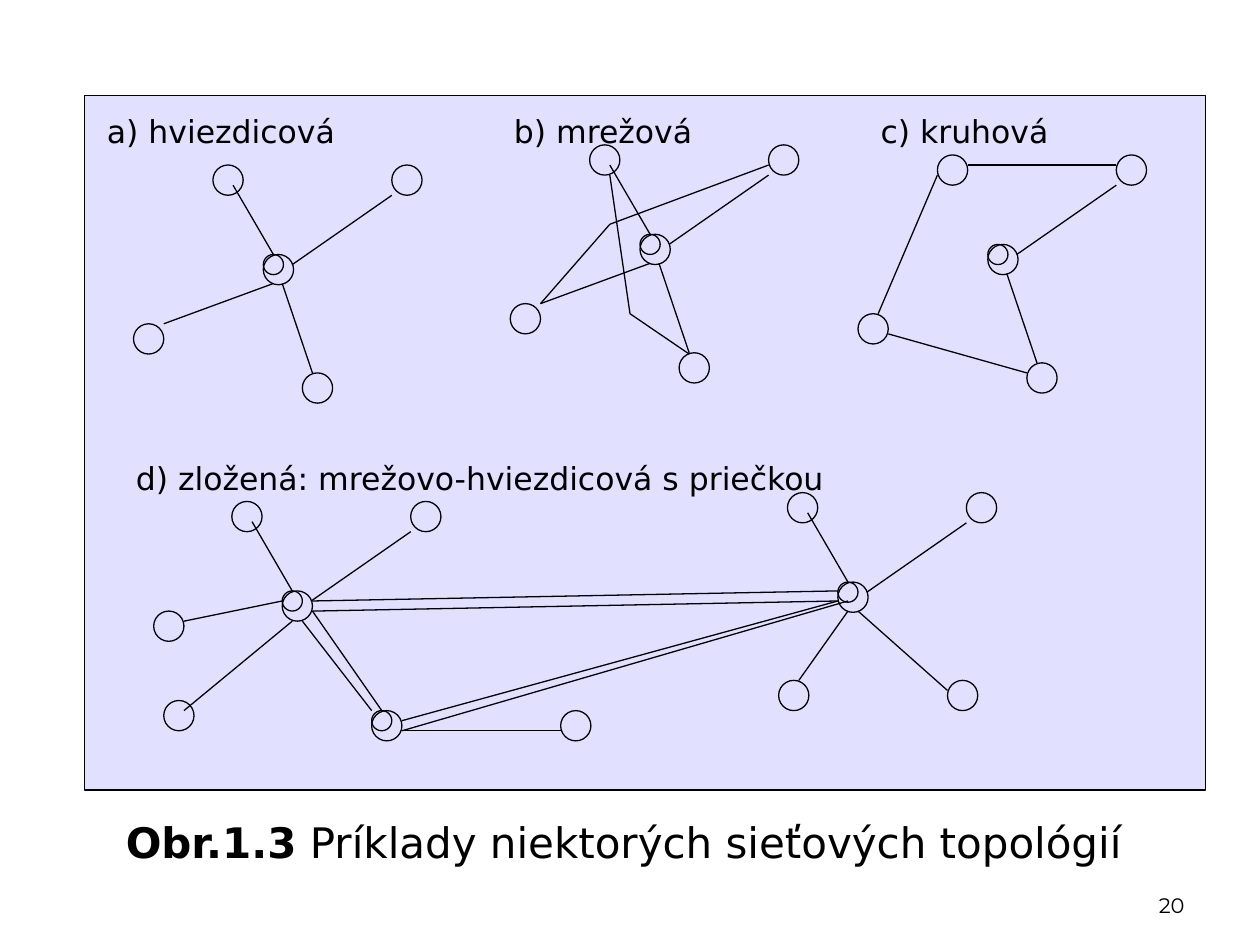
"""Builds a slide showing star, mesh, ring and combined network topologies."""
from dataclasses import dataclass

from lxml import etree
from pptx import Presentation
from pptx.dml.color import RGBColor
from pptx.enum.shapes import MSO_CONNECTOR, MSO_SHAPE
from pptx.enum.text import MSO_ANCHOR, PP_ALIGN
from pptx.oxml.ns import qn
from pptx.util import Inches, Pt

STRAIGHT = MSO_CONNECTOR.STRAIGHT
RECTANGLE, OVAL = MSO_SHAPE.RECTANGLE, MSO_SHAPE.OVAL
TOP, BOTTOM = MSO_ANCHOR.TOP, MSO_ANCHOR.BOTTOM
LEFT, RIGHT = PP_ALIGN.LEFT, PP_ALIGN.RIGHT


@dataclass(frozen=True)
class Theme:
    ink: RGBColor = RGBColor(0x00, 0x00, 0x00)
    panel: RGBColor = RGBColor(0x99, 0x99, 0xFF)
    panel_alpha: str = "29000"
    line: Pt = Pt(0.75)
    font: str = "DejaVu Sans"
    number_font: str = "Montserrat"
    label: Pt = Pt(18)
    caption: Pt = Pt(24)
    number: Pt = Pt(12)


theme = Theme()
NODE, CORE = 0.24, 0.16

prs = Presentation()
prs.slide_width, prs.slide_height = Inches(10), Inches(7.5)
slide = prs.slides.add_slide(prs.slide_layouts[6])


def outlined(kind, left, top, width, height):
    shape = slide.shapes.add_shape(
        kind, Inches(left), Inches(top), Inches(width), Inches(height))
    shape.shadow.inherit = False
    shape.fill.background()
    shape.line.color.rgb = theme.ink
    shape.line.width = theme.line
    return shape


def write(box, runs, size, font=theme.font, align=LEFT, anchor=TOP):
    frame = slide.shapes.add_textbox(*(Inches(v) for v in box)).text_frame
    frame.word_wrap = True
    frame.vertical_anchor = anchor
    paragraph = frame.paragraphs[0]
    paragraph.alignment = align
    for text, bold in runs:
        run = paragraph.add_run()
        run.text = text
        run.font.name = font
        run.font.size = size
        run.font.bold = bold
        run.font.color.rgb = theme.ink


panel = outlined(RECTANGLE, 0.67, 0.76, 8.9, 5.51)
panel.fill.solid()
panel.fill.fore_color.rgb = theme.panel
panel_color = panel.fill._xPr.find(".//" + qn("a:srgbClr"))
etree.SubElement(panel_color, qn("a:alpha"), val=theme.panel_alpha)

upper_nodes = [(-0.4, -0.71), (1.02, -0.71)]
four_nodes = upper_nodes + [(-1.03, 0.55), (0.31, 0.94)]
upper_left = (-0.24, -0.55, 0.08, 0)
upper_right = (0.23, 0.08, 1.02, -0.47)
lower_left = (-0.79, 0.55, 0.08, 0.23)
lower_right = (0.15, 0.23, 0.39, 0.94)
star_links = [upper_left, upper_right, lower_left, lower_right]
mesh_links = [(-0.79, 0.55, -0.24, -0.08), (-0.24, -0.08, 1.02, -0.55),
              (-0.24, -0.47, -0.08, 0.63), (-0.08, 0.63, 0.39, 0.95)]
ring_links = [(1.02, -0.63, -0.16, -0.63), (-0.4, -0.55, -0.87, 0.55),
              (-0.79, 0.71, 0.31, 1.02)]

topologies = [
    ((2.09, 2.02), four_nodes, star_links),
    ((5.08, 1.86), four_nodes, star_links + mesh_links),
    ((7.84, 1.94), four_nodes, [upper_right, lower_right] + ring_links),
    ((2.24, 4.69), upper_nodes + [(-0.94, 0.87), (-1.02, 0.16)],
     [upper_left, upper_right, (-0.78, 0.95, 0.08, 0.24),
      (-0.78, 0.24, 0, 0.08)]),
    ((2.95, 5.64), [(1.5, 0)], [(0.24, 0.16, 1.5, 0.16)]),
    ((6.65, 4.62), upper_nodes + [(-0.47, 0.78), (0.87, 0.78)],
     [upper_left, upper_right, (-0.31, 0.78, 0.08, 0.23),
      (0.16, 0.23, 0.87, 0.86)]),
]
trunk_links = [
    (2.4, 4.93, 2.95, 5.64), (2.48, 4.85, 3.03, 5.64),
    (2.48, 4.77, 6.65, 4.69), (2.48, 4.85, 6.65, 4.77),
    (3.19, 5.72, 6.65, 4.77), (3.19, 5.8, 6.73, 4.77),
]

links = list(trunk_links)
for (hub_x, hub_y), nodes, hub_links in topologies:
    for dx, dy in nodes + [(0, 0)]:
        outlined(OVAL, hub_x + dx, hub_y + dy, NODE, NODE)
    outlined(OVAL, hub_x, hub_y, CORE, CORE)
    links += [(hub_x + x1, hub_y + y1, hub_x + x2, hub_y + y2)
              for x1, y1, x2, y2 in hub_links]

for ends in links:
    link = slide.shapes.add_connector(STRAIGHT, *(Inches(v) for v in ends))
    link.line.color.rgb = theme.ink
    link.line.width = theme.line
    etree.SubElement(link._element.spPr, qn("a:effectLst"))

labels = [
    ("a) hviezdicová", 0.75, 0.84, 2.52),
    ("b) mrežová", 3.98, 0.84, 2.52),
    ("c) kruhová", 6.89, 0.84, 2.52),
    ("d) zložená: mrežovo-hviezdicová s priečkou", 0.98, 3.59, 5.83),
]
for label, left, top, width in labels:
    write((left, top, width, 0.4), [(label, False)], theme.label)

write((0.9, 6.43, 8.74, 0.5),
      [("Obr.1.3", True), (" Príklady niektorých sieťových topológií", False)],
      theme.caption)
write((7.17, 6.83, 2.33, 0.5), [("20", False)], theme.number,
      theme.number_font, RIGHT, BOTTOM)

prs.save("out.pptx")
